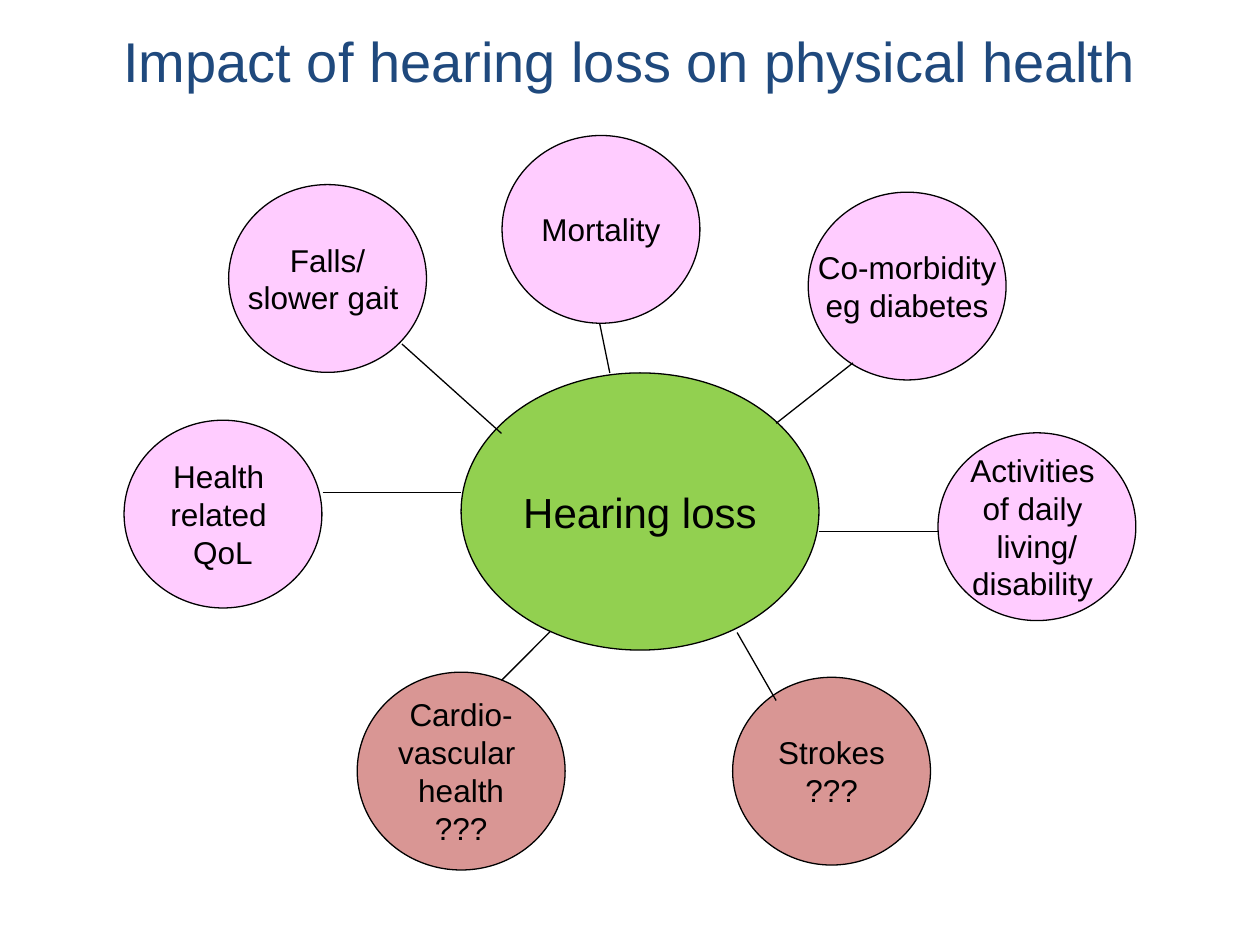
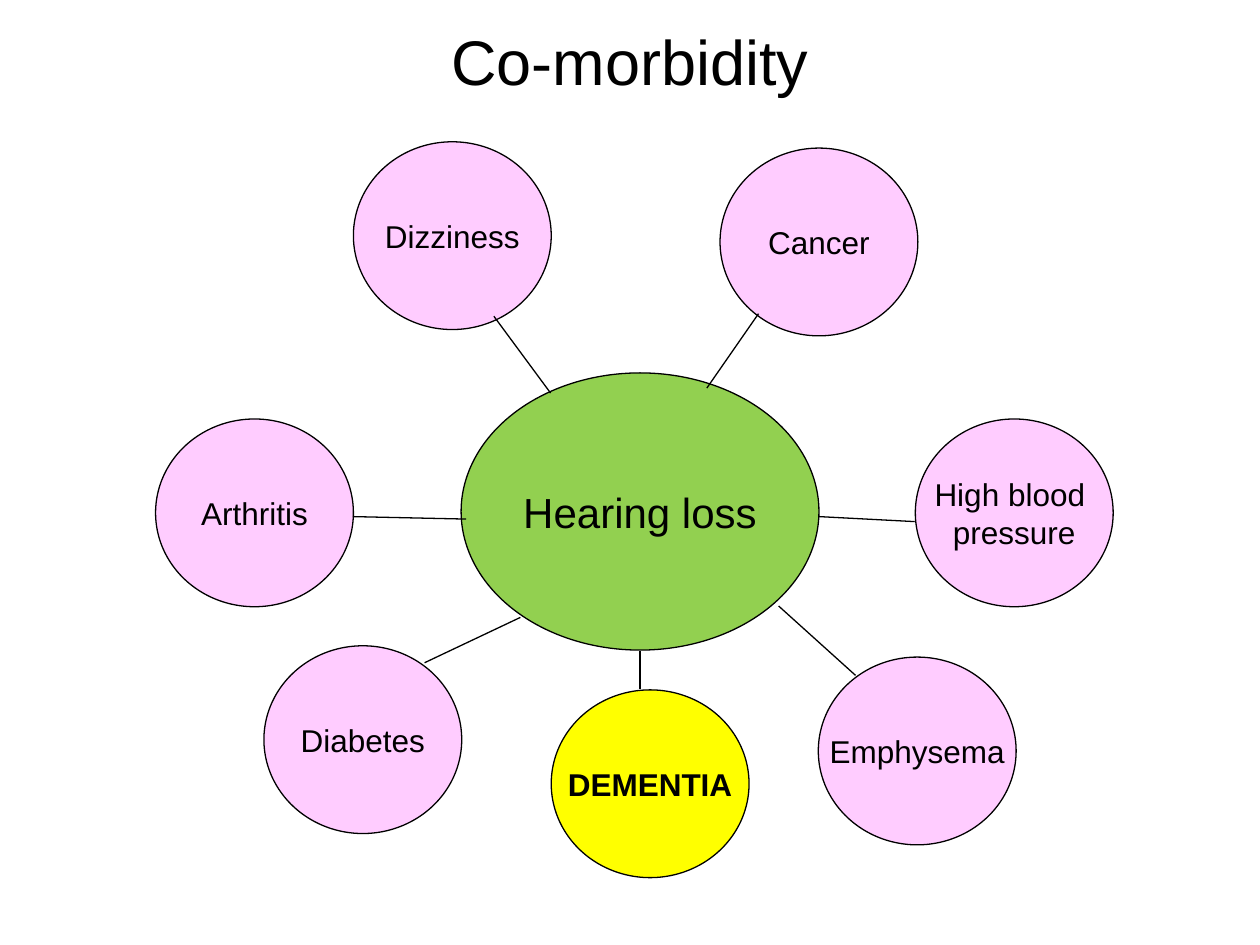
from lxml.etree import SubElement
from pptx import Presentation
from pptx.dml.color import RGBColor
from pptx.enum.shapes import MSO_CONNECTOR, MSO_SHAPE
from pptx.enum.text import MSO_ANCHOR, PP_ALIGN
from pptx.oxml.ns import qn
from pptx.util import Inches, Pt

BLACK = RGBColor(0x00, 0x00, 0x00)
NAVY = RGBColor(0x1F, 0x49, 0x7D)
GREEN = RGBColor(0x92, 0xD0, 0x50)
PINK = RGBColor(0xFF, 0xCC, 0xFF)
ROSE = RGBColor(0xD9, 0x96, 0x94)
YELLOW = RGBColor(0xFF, 0xFF, 0x00)

FONT = "Arial"
COLS, ROWS = 10, 7.5  # grid of one-inch cells
UNIT = Inches(1)
HUB = dict(lines=["Hearing loss"], mid=(5.08, 4.06), size=(2.84, 2.2),
           fill=GREEN, points=24)
ROUND = (1.57, 1.49)
LARGE = (1.65, 1.57)

# Each topic: its lines, the middle of its circle, its spoke (from, to)
# and whatever differs from a plain pink circle.
SLIDES = [
    dict(title="Impact of hearing loss on physical health", points=32, color=NAVY, topics=[
        (["Mortality"], (4.77, 1.82), ((4.76, 2.57), (4.84, 2.96)), {}),
        (["Co-morbidity", "eg diabetes"], (7.2, 2.27), ((6.77, 2.88), (6.16, 3.36)), {}),
        (["Activities ", "of daily ", "living/", "disability "], (8.23, 4.18),
         ((7.45, 4.22), (6.5, 4.22)), {}),
        (["Strokes", "???"], (6.6, 6.12), ((6.16, 5.56), (5.85, 5.02)), dict(fill=ROSE)),
        (["Cardio-", "vascular ", "health", "???"], (3.66, 6.12),
         ((3.98, 5.4), (4.37, 5.01)), dict(fill=ROSE, size=LARGE)),
        (["Health ", "related ", "QoL"], (1.77, 4.08), ((2.56, 3.91), (3.66, 3.91)), {}),
        (["Falls/", "slower gait "], (2.6, 2.21), ((3.19, 2.73), (3.98, 3.44)), {}),
    ]),
    dict(title="Co-morbidity", points=36, color=BLACK, topics=[
        (["Dizziness"], (3.59, 1.87), ((3.92, 2.51), (4.37, 3.12)), {}),
        (["Cancer"], (6.5, 1.92), ((6.02, 2.49), (5.61, 3.08)), {}),
        (["High blood ", "pressure"], (8.05, 4.07), ((7.26, 4.14), (6.5, 4.1)), {}),
        (["Emphysema"], (7.28, 5.96), ((6.79, 5.36), (6.18, 4.81)), {}),
        (["DEMENTIA"], (5.16, 6.22), ((5.08, 5.47), (5.08, 5.17)),
         dict(fill=YELLOW, bold=True)),
        (["Diabetes"], (2.88, 5.87), ((3.37, 5.26), (4.13, 4.9)), {}),
        (["Arthritis"], (2.02, 4.07), ((2.8, 4.1), (3.7, 4.12)), {}),
    ]),
]


def grid(*cells):
    return [round(cell * UNIT) for cell in cells]


def write(frame, lines, points, color=BLACK, bold=None):
    frame.vertical_anchor = MSO_ANCHOR.MIDDLE
    for i, line in enumerate(lines):
        para = frame.add_paragraph() if i else frame.paragraphs[0]
        para.alignment = PP_ALIGN.CENTER
        run = para.add_run()
        run.text = line
        font = run.font
        font.name, font.size, font.bold = FONT, Pt(points), bold
        font.color.rgb = color


def stroke(line):
    line.color.rgb = BLACK
    line.width = Pt(0.75)


def head(slide, text, points, color):
    """Title band, with its line held above the middle of the band."""
    frame = slide.shapes.add_textbox(*grid(0, 0.21, COLS, 0.87)).text_frame
    frame.word_wrap = True
    frame.margin_top, frame.margin_bottom = grid(0, 0.33)
    write(frame, [text], points, color)


def bubble(slide, lines, mid, size=ROUND, fill=PINK, points=18, bold=None):
    (x, y), (wide, high) = mid, size
    box = grid(x - wide / 2, y - high / 2, wide, high)
    oval = slide.shapes.add_shape(MSO_SHAPE.OVAL, *box)
    oval.shadow.inherit = False
    oval.fill.solid()
    oval.fill.fore_color.rgb = fill
    stroke(oval.line)
    oval.text_frame.word_wrap = False
    write(oval.text_frame, lines, points, bold=bold)


def spoke(slide, start, end):
    link = slide.shapes.add_connector(MSO_CONNECTOR.STRAIGHT, *grid(*start, *end))
    stroke(link.line)
    SubElement(link._element.spPr, qn("a:effectLst"))


def main():
    deck = Presentation()
    deck.slide_width, deck.slide_height = grid(COLS, ROWS)
    for page in SLIDES:
        slide = deck.slides.add_slide(deck.slide_layouts[6])
        head(slide, page["title"], page["points"], page["color"])
        bubble(slide, **HUB)
        for lines, mid, ends, style in page["topics"]:
            bubble(slide, lines, mid, **style)
            spoke(slide, *ends)
    deck.save("out.pptx")


if __name__ == "__main__":
    main()
